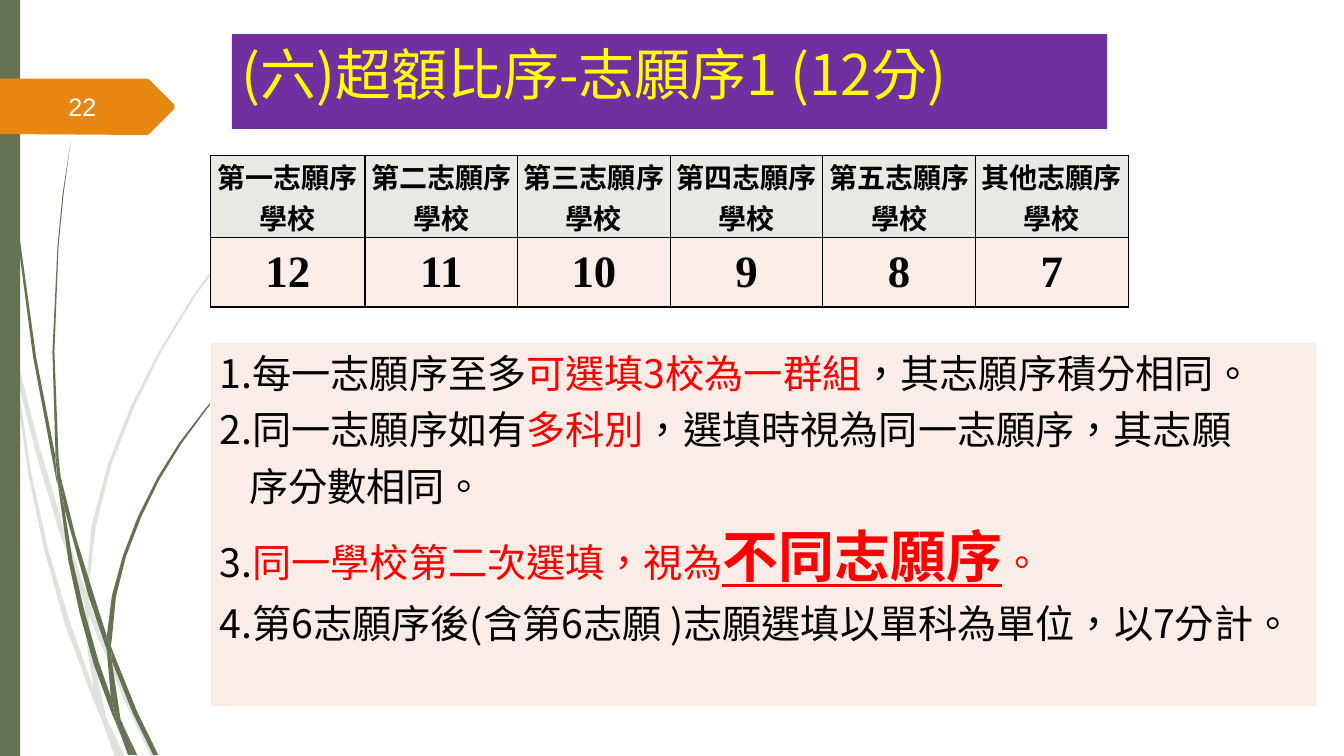
from lxml import etree
from pptx import Presentation
from pptx import util as u
from pptx.dml import color
from pptx.enum import lang, shapes, text
from pptx.oxml import ns

Inches = u.Inches
RGB = color.RGBColor
GREEN, ORANGE, PURPLE = RGB(0x64, 0x72, 0x52), RGB(0xE7, 0x87, 0x12), RGB(0x70, 0x30, 0xA0)
YELLOW, RED = RGB(0xFF, 0xFF, 0), RGB(0xFF, 0, 0)
BLACK, WHITE = RGB(0, 0, 0), RGB(0xFF, 0xFF, 0xFF)
SAGE, PEACH = RGB(0xE6, 0xE9, 0xE4), RGB(0xFA, 0xED, 0xE7)
CJK = "Noto Sans CJK SC"

TITLE = "(六)超額比序-志願序1 (12分)"
PAGE = "22"
SCORES = [("第一", 12), ("第二", 11), ("第三", 10), ("第四", 9), ("第五", 8), ("其他", 7)]
KEY = {"color": RED}
STRONG = {"color": RED, "size": 40, "bold": True, "underline": True}
RULES = [
    (0, [("1.每一志願序至多", {}), ("可選填3校為一群組", KEY), ("，其志願序積分相同。", {})]),
    (0.29, [("2.同一志願序如有", {}), ("多科別", KEY),
            ("，選填時視為同一志願序，其志願\n序分數相同。", {})]),
    (0, [("3.", {}), ("同一學校第二次選填，視為", KEY), ("不同志願序", STRONG), ("。", KEY)]),
    (0.29, [("4.第6志願序後(含第6志願 )志願選填以單科為單位，以7分計。", {})]),
]
ARROW = [(-0.01, 0.78), (1.46, 0.78), (1.48, 0.79), (1.73, 1.04), (1.73, 1.08), (1.48, 1.33),
         (1.46, 1.34), (-0.01, 1.33)]
PALE_GRASS = [
    [(0.11, 3.5), (0.08, 3.22), (0, 2.82), (0, 2.99), (0.1, 3.44)],
    [(0.57, 5.22), (0.84, 5.99), (0.85, 5.86), (0.62, 5.2), (0.37, 4.36), (0.14, 3.45),
     (0.17, 3.76), (0.36, 4.51)],
    [(0.92, 6.07), (0.88, 5.96), (0.88, 6.1), (1.23, 6.94), (1.5, 7.51), (1.55, 7.51),
     (1.27, 6.92)],
    [(1.19, 7.51), (1.24, 7.51), (1.05, 7.11)],
    [(0.93, 6.83), (0.7, 6.19), (0.48, 5.46), (0.31, 4.69), (0.17, 3.76), (0.11, 3.5),
     (0.28, 4.7), (0.44, 5.46), (0.65, 6.21), (0.92, 6.93), (1.01, 7.14), (0.99, 7.07)],
    [(0.84, 5.99), (0.87, 6.46), (0.93, 6.83), (0.96, 6.92), (1.05, 7.11), (1.04, 7.06),
     (0.91, 6.46), (0.88, 6.1), (0.88, 6.08)],
    [(0.88, 5.84), (0.95, 5.22), (1.1, 4.62), (1.33, 4.04), (1.6, 3.49), (1.93, 2.95),
     (2.29, 2.45), (2.68, 1.98), (2.9, 1.75), (3.12, 1.53), (2.89, 1.75), (2.68, 1.97),
     (2.28, 2.44), (1.91, 2.94), (1.58, 3.48), (1.3, 4.03), (1.07, 4.61), (0.91, 5.21),
     (0.85, 5.84), (0.85, 5.86), (0.88, 5.96)],
    [(1.01, 7.14), (1.14, 7.51), (1.19, 7.51)],
    [(0.88, 6.08), (0.88, 6.1), (0.88, 5.96), (0.85, 5.86), (0.84, 5.99)],
    [(0.96, 6.92), (0.93, 6.83), (0.99, 7.07), (1.01, 7.14), (1.19, 7.51), (1.05, 7.11)],
]
DARK_GRASS = [
    [(0.07, 1.1), (0.17, 2.33), (0.33, 3.55), (0.56, 4.77), (0.57, 4.81), (0.55, 4.57),
     (0.55, 4.53), (0.36, 3.55), (0.19, 2.32), (0.08, 1.09), (0.05, 0.48), (0.03, 0),
     (0.03, 0.48)],
    [(0.88, 5.92), (1.06, 6.45), (1.06, 6.33), (1.06, 6.31), (0.93, 5.9), (0.75, 5.32),
     (0.6, 4.72), (0.64, 5.05)],
    [(1.13, 6.49), (1.1, 6.41), (1.11, 6.56), (1.32, 7.08), (1.52, 7.49), (1.57, 7.49),
     (1.36, 7.06)],
    [(1.1, 6.91), (0.98, 6.57), (0.84, 6.07), (0.72, 5.56), (0.64, 5.05), (0.57, 4.77),
     (0.68, 5.57), (0.79, 6.08), (0.93, 6.59), (1.11, 7.08), (1.17, 7.22), (1.16, 7.17)],
    [(0.6, 4.72), (0.58, 4.53), (0.54, 3.49), (0.58, 2.45), (0.63, 1.93), (0.7, 1.41),
     (0.62, 1.93), (0.57, 2.45), (0.52, 3.49), (0.55, 4.49)],
    [(1.33, 7.49), (1.36, 7.49), (1.22, 7.19)],
    [(0.57, 4.77), (0.64, 5.05), (0.6, 4.72), (0.55, 4.49), (0.55, 4.53)],
    [(1.11, 6.33), (1.15, 5.92), (1.25, 5.52), (1.4, 5.13), (1.58, 4.76), (1.8, 4.4),
     (2.05, 4.06), (2.31, 3.74), (2.46, 3.59), (2.61, 3.44), (2.45, 3.58), (2.31, 3.73),
     (2.04, 4.05), (1.78, 4.39), (1.56, 4.74), (1.37, 5.12), (1.22, 5.51), (1.11, 5.91),
     (1.06, 6.31), (1.1, 6.41)],
    [(1.17, 7.22), (1.27, 7.49), (1.31, 7.49)],
    [(1.06, 6.45), (1.1, 6.92), (1.16, 7.06), (1.22, 7.19), (1.2, 7.16), (1.11, 6.56),
     (1.09, 6.51)],
    [(1.06, 6.45), (1.09, 6.51), (1.11, 6.56), (1.1, 6.41), (1.06, 6.31), (1.06, 6.33)],
    [(1.16, 7.06), (1.1, 6.91), (1.16, 7.17), (1.17, 7.22), (1.31, 7.49), (1.33, 7.49),
     (1.22, 7.19)],
]


def write(p, content, size=28, font=CJK, color=BLACK, bold=False, underline=False):
    for i, line in enumerate(content.split("\n")):
        if i:
            p.add_line_break()
        r = p.add_run()
        r.text = line
        f = r.font
        f.size, f.name, f.bold, f.underline = u.Pt(size), font, bold, underline
        f.color.rgb = color
        f.language_id = lang.MSO_LANGUAGE_ID.TRADITIONAL_CHINESE
        rpr = r._r.get_or_add_rPr()
        rpr.find(ns.qn("a:latin")).addnext(etree.Element(ns.qn("a:ea"), typeface=CJK))


def paint(sp, fill):
    sp.shadow.inherit = False
    sp.fill.solid()
    sp.fill.fore_color.rgb = fill
    sp.line.fill.background()
    return sp


def block(s, box, fill):
    return paint(s.shapes.add_shape(shapes.MSO_SHAPE.RECTANGLE, *map(Inches, box)), fill)


def outline(s, points, fill, alpha=None):
    corners = [tuple(map(Inches, pt)) for pt in points]
    fb = s.shapes.build_freeform(*corners[0])
    fb.add_line_segments(corners[1:], close=True)
    sp = paint(fb.convert_to_shape(), fill)
    if alpha:
        clr = sp._element.spPr.find(".//" + ns.qn("a:srgbClr"))
        etree.SubElement(clr, ns.qn("a:alpha"), val=str(alpha * 1000))


def grid(s, left, top, widths, heights):
    frame = s.shapes.add_table(len(heights), len(widths), *map(
        Inches, (left, top, sum(widths), sum(heights))))
    for col, w in zip(frame.table.columns, widths):
        col.width = Inches(w)
    for row, h in zip(frame.table.rows, heights):
        row.height = Inches(h)
    return frame.table


def style_cell(cell, fill, border, insets, anchor):
    cell.margin_left, cell.margin_top, cell.margin_right, cell.margin_bottom = map(Inches, insets)
    cell.vertical_anchor = anchor
    tcpr = cell._tc.get_or_add_tcPr()
    for side in ("a:lnL", "a:lnR", "a:lnT", "a:lnB"):
        ln = etree.SubElement(tcpr, ns.qn(side), w=str(u.Pt(1)))
        solid = etree.SubElement(ln, ns.qn("a:solidFill"))
        etree.SubElement(solid, ns.qn("a:srgbClr"), val=str(border))
    cell.fill.solid()
    cell.fill.fore_color.rgb = fill


def main():
    prs = Presentation()
    prs.slide_width, prs.slide_height = Inches(13.33), Inches(7.5)
    s = prs.slides.add_slide(prs.slide_layouts[6])

    for blade in PALE_GRASS:
        outline(s, blade, GREEN, alpha=20)
    for blade in DARK_GRASS:
        outline(s, blade, GREEN)
    block(s, (0, 0, 0.2, 7.5), GREEN)
    outline(s, ARROW, ORANGE)

    tf = block(s, (2.3, 0.34, 8.68, 0.94), PURPLE).text_frame
    tf.word_wrap, tf.vertical_anchor = True, text.MSO_ANCHOR.TOP
    p = tf.paragraphs[0]
    p.alignment = text.PP_ALIGN.LEFT
    write(p, TITLE, size=40, color=YELLOW)

    first = 1.53
    rest = (9.1 - first) / (len(SCORES) - 1)
    table = grid(s, 2.09, 1.54, [first] + [rest] * (len(SCORES) - 1), [0.69] * 2)
    for col, (order, score) in enumerate(SCORES):
        for row, (content, size, font, fill) in enumerate([
                (order + "志願序學校", 20, "Arial", SAGE),
                (str(score), 32, "Times New Roman", PEACH)]):
            cell = table.cell(row, col)
            style_cell(cell, fill, BLACK, (0.01, 0.01, 0.01, 0), text.MSO_ANCHOR.MIDDLE)
            p = cell.text_frame.paragraphs[0]
            p.alignment = text.PP_ALIGN.CENTER
            write(p, content, size=size, font=font, bold=True)

    cell = grid(s, 2.09, 3.4, [10.97], [2.52]).cell(0, 0)
    style_cell(cell, PEACH, WHITE, (0.09, 0, 0.09, 0), text.MSO_ANCHOR.TOP)
    tf = cell.text_frame
    for i, (indent, runs) in enumerate(RULES):
        p = tf.add_paragraph() if i else tf.paragraphs[0]
        if indent:
            ppr = p._p.get_or_add_pPr()
            ppr.set("marL", str(Inches(indent)))
            ppr.set("indent", str(-Inches(indent)))
        for content, look in runs:
            write(p, content, **look)

    tf = s.shapes.add_textbox(*map(Inches, (0.58, 0.86, 0.85, 0.4))).text_frame
    tf.word_wrap, tf.vertical_anchor = True, text.MSO_ANCHOR.MIDDLE
    write(tf.paragraphs[0], PAGE, size=18, font="Arial", color=WHITE)
    prs.save("out.pptx")


if __name__ == "__main__":
    main()
